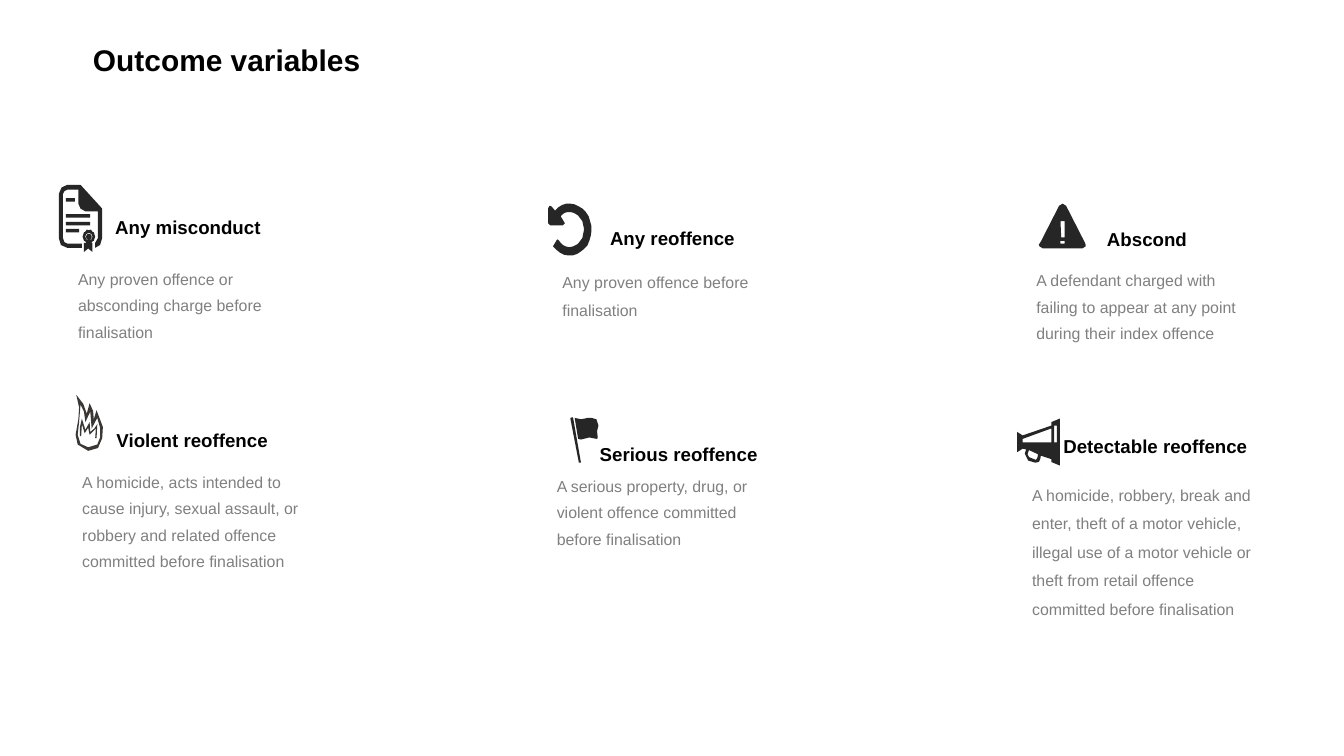
from math import cos, radians, sin

from pptx import Presentation
from pptx import util as u
from pptx.dml.color import RGBColor
from pptx.enum import shapes, text

PX = 9525
BLACK = RGBColor(0x00, 0x00, 0x00)
GREY = RGBColor(0x80, 0x80, 0x80)
CHARCOAL = RGBColor(0x26, 0x26, 0x26)
EMBER = RGBColor(0x3B, 0x37, 0x35)


def arc(cx, cy, rx, ry, start, end, steps=24):
    angles = [radians(start + (end - start) * i / steps) for i in range(steps + 1)]
    return [(round(cx + rx * cos(a)), round(cy + ry * sin(a))) for a in angles]


def paint(part, colour):
    part.shadow.inherit = False
    part.fill.solid()
    part.fill.fore_color.rgb = colour
    part.line.fill.background()


prs = Presentation()
prs.slide_width = 1920 * PX
prs.slide_height = 1080 * PX
slide = prs.slides.add_slide(prs.slide_layouts[6])

headings = [
    ("Outcome variables", 102, 49, 444, 65, 32),
    ("Any misconduct", 102, 301, 333, 51, 20),
    ("Any reoffence", 794, 316, 333, 51, 20),
    ("Abscond", 1472, 317, 333, 51, 20),
    ("Violent reoffence", 108, 605, 333, 51, 20),
    ("Serious reoffence", 803, 624, 333, 51, 20),
    ("Detectable reoffence", 1484, 614, 333, 51, 20),
]
definitions = [
    ("Any proven offence or absconding charge before finalisation", 102, 369, 333, 126, 1.4),
    ("Any proven offence before finalisation", 794, 371, 333, 126, 1.5),
    ("A defendant charged with failing to appear at any point during their index offence",
     1471, 371, 333, 126, 1.4),
    ("A homicide, acts intended to cause injury, sexual assault, or robbery and related "
     "offence committed before finalisation", 108, 659, 333, 164, 1.4),
    ("A serious property, drug, or violent offence committed before finalisation",
     786, 665, 333, 126, 1.4),
    ("A homicide, robbery, break and enter, theft of a motor vehicle, illegal use of a motor "
     "vehicle or theft from retail offence committed before finalisation",
     1465, 675, 333, 215, 1.5),
]
passages = [(*h, 1.1, True, BLACK, text.PP_ALIGN.CENTER) for h in headings]
passages += [(*d[:5], 17, d[5], False, GREY, text.PP_ALIGN.LEFT) for d in definitions]

for words, x, y, w, h, size, spacing, bold, colour, align in passages:
    frame = slide.shapes.add_textbox(x * PX, y * PX, w * PX, h * PX).text_frame
    frame.word_wrap = True
    line = frame.paragraphs[0]
    line.text = words
    line.alignment = align
    line.line_spacing = spacing
    line.font.name = "Arial"
    line.font.size = u.Pt(size)
    line.font.bold = bold
    line.font.color.rgb = colour

page = [(115, 264), (96, 264), (88, 268), (84, 277), (84, 340), (87, 350), (96, 354),
        (117, 354), (117, 348), (96, 348), (92, 346), (90, 340), (90, 277), (92, 273),
        (96, 271), (112, 271), (112, 291), (115, 298), (122, 302), (140, 302), (140, 340),
        (136, 347), (136, 354), (143, 350), (146, 340), (146, 298)]
ribbon = [(120, 347), (132, 347), (132, 360), (126, 355), (120, 360)]
rosette = [(round(127 + (9 - i % 2) * cos(radians(18 * i))),
            round(338 + (10 - i % 2) * sin(radians(18 * i)))) for i in range(20)]
rosette_hole = arc(127, 338, 5, 5, 0, 360)

return_arrow = (
    arc(814, 328, 31, 37, 140, -133)
    + [(788, 295), (785, 294), (783, 298), (783, 319), (786, 322), (804, 322), (807, 319)]
    + arc(814, 328, 20, 25, -132, 143)
    + [(796, 342)])

triangle = [(1518, 291), (1523, 294), (1550, 347), (1551, 350), (1551, 352), (1546, 355),
            (1490, 355), (1485, 352), (1484, 349), (1486, 347), (1513, 294)]
exclamation = [(1515, 316), (1521, 316), (1521, 339), (1516, 339)]
exclamation_dot = [(1515, 344), (1521, 344), (1521, 348), (1515, 348)]

flame = [(138, 586), (134, 599), (133, 587), (128, 576), (124, 591), (119, 577), (109, 564),
         (113, 582), (112, 599), (108, 621), (111, 635), (126, 644), (140, 640), (146, 626),
         (147, 610)]
flame_hole = [(143, 625), (139, 635), (126, 639), (115, 634), (111, 621), (113, 603),
              (115, 578), (120, 588), (122, 603), (129, 588), (131, 612), (139, 597),
              (143, 611)]
flicker = [(139, 606), (135, 612), (129, 617), (128, 603), (122, 614), (117, 598), (114, 611),
           (114, 623), (116, 623), (117, 606), (121, 619), (126, 611), (128, 621), (137, 612),
           (136, 626), (138, 626)]

flagpole = [(815, 597), (818, 596), (819, 598), (830, 661), (827, 661), (815, 599)]
flag = [(821, 597), (830, 599), (840, 597), (845, 597), (852, 599), (855, 608), (853, 616),
        (854, 626), (852, 627), (842, 625), (830, 628), (826, 627)]

megaphone = [(1502, 603), (1502, 608), (1461, 622), (1453, 617), (1453, 646), (1461, 641),
             (1466, 642), (1464, 648), (1469, 658), (1479, 661), (1484, 660), (1486, 656),
             (1487, 651), (1502, 656), (1502, 660), (1514, 665), (1514, 598)]
handle = [(1482, 654), (1480, 657), (1470, 653), (1468, 649), (1470, 643), (1483, 649)]
cone = [(1502, 632), (1461, 632), (1461, 627), (1502, 612)]
rim = [(1510, 632), (1506, 632), (1506, 608), (1510, 608)]

icons = [
    (CHARCOAL, [page]),
    (CHARCOAL, [ribbon]),
    (CHARCOAL, [rosette, rosette_hole]),
    (CHARCOAL, [return_arrow]),
    (CHARCOAL, [triangle, exclamation, exclamation_dot]),
    (EMBER, [flame, flame_hole]),
    (EMBER, [flicker]),
    (CHARCOAL, [flagpole, flag]),
    (CHARCOAL, [megaphone, handle, cone, rim]),
]
for colour, contours in icons:
    pen = slide.shapes.build_freeform(*contours[0][0], scale=PX)
    for contour in contours:
        if contour is not contours[0]:
            pen.move_to(*contour[0])
        pen.add_line_segments(contour[1:], close=True)
    paint(pen.convert_to_shape(), colour)

for y, w in [(283, 13), (306, 35), (317, 35), (327, 19)]:
    text_line = slide.shapes.add_shape(
        shapes.MSO_SHAPE.RECTANGLE, 94 * PX, y * PX, w * PX, 5 * PX)
    paint(text_line, CHARCOAL)
seal = slide.shapes.add_shape(shapes.MSO_SHAPE.OVAL, 123 * PX, 334 * PX, 8 * PX, 9 * PX)
paint(seal, CHARCOAL)

prs.save("out.pptx")
